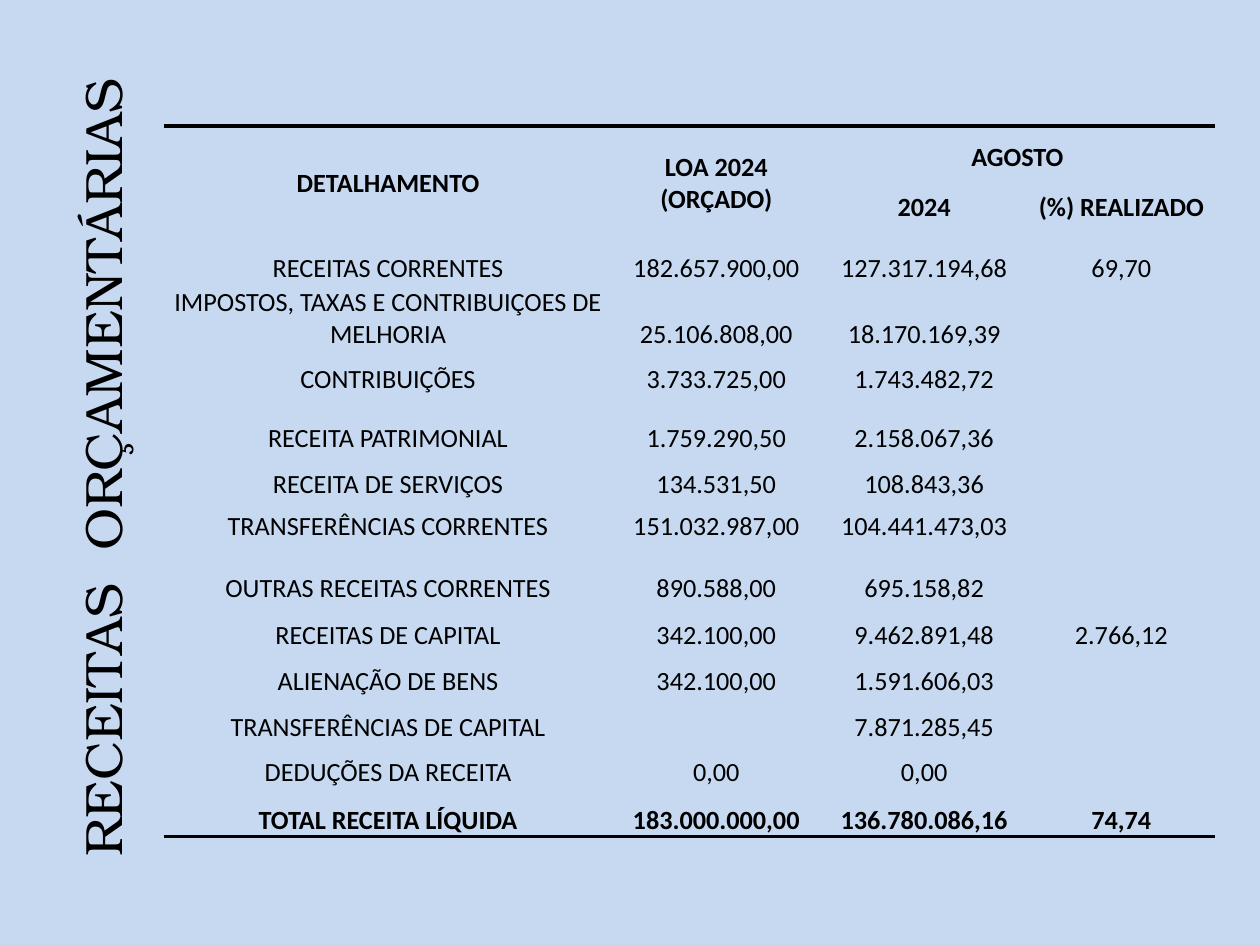
from lxml.etree import SubElement
from pptx import Presentation
from pptx.dml.color import RGBColor
from pptx.enum.text import MSO_ANCHOR, PP_ALIGN
from pptx.oxml.ns import qn
from pptx.util import Inches, Pt

COLORS = {"background": "C6D9F1", "text": "000000"}
NO_STYLE_NO_GRID = "{2D5ABB26-0587-4C30-8999-92F81FD0307C}"
COLUMN_WIDTHS = [3.56, 1.65, 1.65, 1.48]
ROW_HEIGHTS = [0.38, 0.51, 0.36, 0.36, 0.36, 0.47, 0.36, 0.34, 0.49, 0.37, 0.37, 0.36, 0.36, 0.38]
ROWS = [
    ["DETALHAMENTO", "LOA 2024 (ORÇADO)", "AGOSTO", ""],
    ["", "", "2024", "(%) REALIZADO"],
    ["RECEITAS CORRENTES", "182.657.900,00", "127.317.194,68", "69,70"],
    ["IMPOSTOS, TAXAS E CONTRIBUIÇOES DE MELHORIA", "25.106.808,00", "18.170.169,39", ""],
    ["CONTRIBUIÇÕES", "3.733.725,00", "1.743.482,72", ""],
    ["RECEITA PATRIMONIAL", "1.759.290,50", "2.158.067,36", ""],
    ["RECEITA DE SERVIÇOS", "134.531,50", "108.843,36", ""],
    ["TRANSFERÊNCIAS CORRENTES", "151.032.987,00", "104.441.473,03", ""],
    ["OUTRAS RECEITAS CORRENTES", "890.588,00", "695.158,82", ""],
    ["RECEITAS DE CAPITAL", "342.100,00", "9.462.891,48", "2.766,12"],
    ["ALIENAÇÃO DE BENS", "342.100,00", "1.591.606,03", ""],
    ["TRANSFERÊNCIAS DE CAPITAL", "", "7.871.285,45", ""],
    ["DEDUÇÕES DA RECEITA", "0,00", "0,00", ""],
    ["TOTAL RECEITA LÍQUIDA", "183.000.000,00", "136.780.086,16", "74,74"],
]
MERGES = [(0, 0, 1, 0), (0, 1, 1, 1), (0, 2, 0, 3), (3, 3, 8, 3), (10, 3, 12, 3)]
LAST_ROW = len(ROWS) - 1


def format_paragraph(paragraph, name, size, bold):
    paragraph.alignment = PP_ALIGN.CENTER
    paragraph.font.name = name
    paragraph.font.size = Pt(size)
    paragraph.font.bold = bold
    paragraph.font.color.rgb = RGBColor.from_string(COLORS["text"])


def add_border(cell, side):
    line = SubElement(cell._tc.get_or_add_tcPr(), qn(f"a:{side}"), w=str(Pt(2)))
    fill = SubElement(line, qn("a:solidFill"))
    SubElement(fill, qn("a:srgbClr"), val=COLORS["text"])


presentation = Presentation()
presentation.slide_width = Inches(10)
presentation.slide_height = Inches(7.5)
slide = presentation.slides.add_slide(presentation.slide_layouts[6])
slide.background.fill.solid()
slide.background.fill.fore_color.rgb = RGBColor.from_string(COLORS["background"])

heading = slide.shapes.add_textbox(Inches(0.51), Inches(0.52), Inches(1.01), Inches(6.38))
heading.text_frame.text = "RECEITAS  ORÇAMENTÁRIAS"
heading.text_frame.word_wrap = True
heading.text_frame._txBody.bodyPr.set("vert", "vert270")
format_paragraph(heading.text_frame.paragraphs[0], "TeX Gyre Bonum", 30, False)

table = slide.shapes.add_table(
    len(ROWS), len(COLUMN_WIDTHS), Inches(1.3), Inches(1), Inches(8.35), Inches(5.64)
).table
table.first_row = False
table.horz_banding = False
table._tbl.tblPr.find(qn("a:tableStyleId")).text = NO_STYLE_NO_GRID
for column, width in zip(table.columns, COLUMN_WIDTHS):
    column.width = Inches(width)
for row, height in zip(table.rows, ROW_HEIGHTS):
    row.height = Inches(height)

for row_index, texts in enumerate(ROWS):
    for column_index, text in enumerate(texts):
        cell = table.cell(row_index, column_index)
        cell.text = text
        cell.margin_left = cell.margin_right = cell.margin_top = Inches(0.01)
        cell.margin_bottom = 0
        is_middle = row_index == 1 or (row_index == 0 and column_index < 2)
        cell.vertical_anchor = MSO_ANCHOR.MIDDLE if is_middle else MSO_ANCHOR.BOTTOM
        format_paragraph(cell.text_frame.paragraphs[0], "Calibri", 15, row_index in (0, 1, LAST_ROW))
        if row_index == 0:
            add_border(cell, "lnT")
        if row_index == LAST_ROW:
            add_border(cell, "lnB")
        cell.fill.solid()
        cell.fill.fore_color.rgb = RGBColor.from_string(COLORS["background"])

for top, left, bottom, right in MERGES:
    table.cell(top, left).merge(table.cell(bottom, right))

presentation.save("out.pptx")
